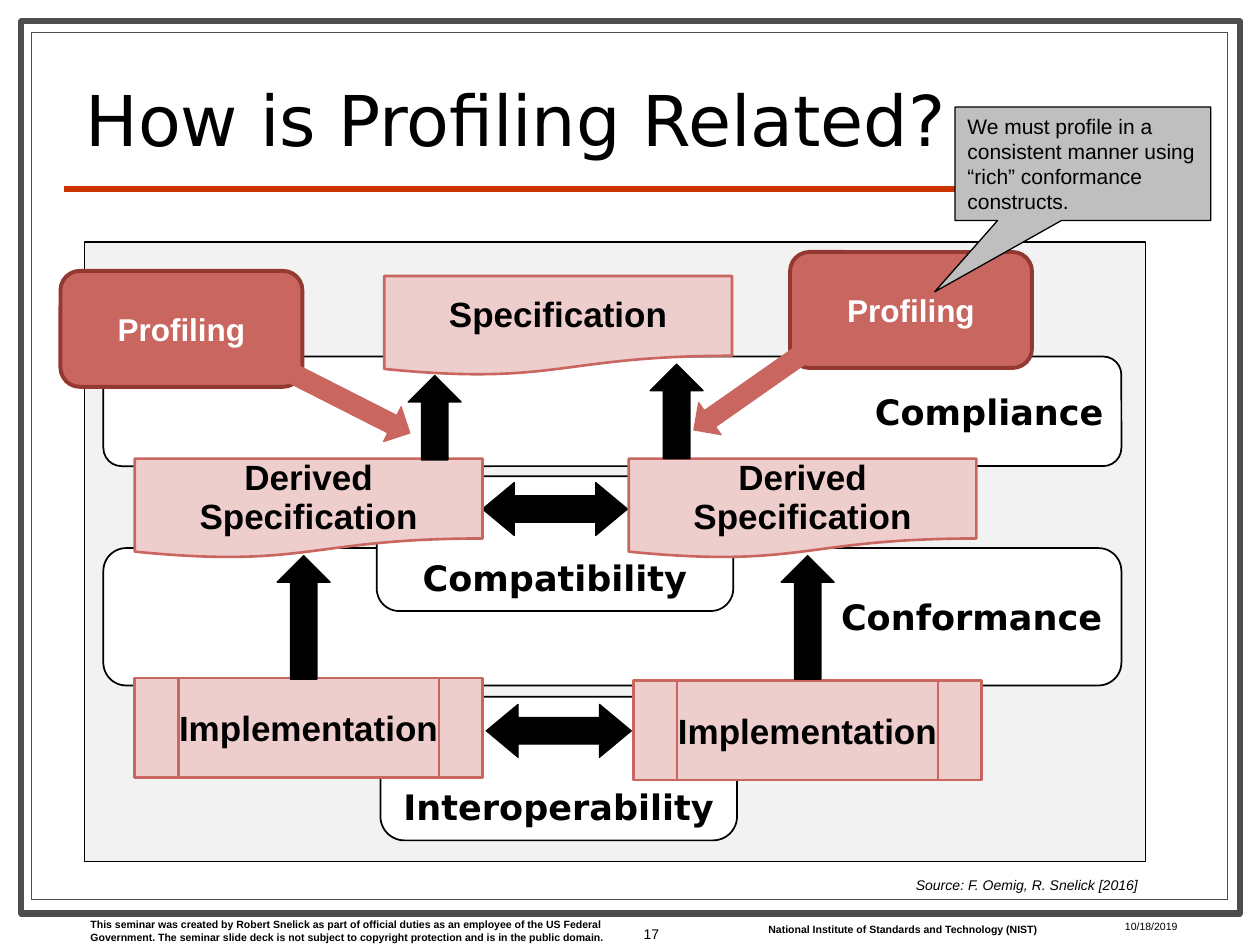
from dataclasses import dataclass
from typing import Optional

import pptx
import pptx.dml.color
import pptx.enum.shapes
import pptx.enum.text
import pptx.oxml
import pptx.util
from pptx.util import Inches

SHAPE = pptx.enum.shapes.MSO_SHAPE
ALIGN = pptx.enum.text.PP_ALIGN
ANCHOR = pptx.enum.text.MSO_ANCHOR


@dataclass(frozen=True)
class Theme:
    black: str = "000000"
    white: str = "FFFFFF"
    frame: str = "4D4D4D"
    rule: str = "CC3300"
    panel: str = "F2F2F2"
    callout: str = "BFBFBF"
    pink: str = "EECECC"
    red: str = "C96660"
    dark_red: str = "943832"
    sans: str = "Arial"
    display: str = "DejaVu Sans"
    title: int = 40
    label: int = 20
    badge: int = 18
    note: int = 12
    source: int = 8
    footer: int = 6


T = Theme()


@dataclass(frozen=True)
class Box:
    x: float
    y: float
    w: float
    h: float


@dataclass(frozen=True)
class Paint:
    fill: str
    line: str
    width: float


@dataclass(frozen=True)
class Type:
    size: int
    font: str = T.sans
    color: str = T.black
    bold: bool = False
    italic: bool = False
    align: ALIGN = ALIGN.LEFT
    anchor: ANCHOR = ANCHOR.TOP
    spacing: Optional[float] = None
    wrap: bool = True
    inset: float = 0.1


BAND = Paint(T.white, T.black, 1)
CARD = Paint(T.pink, T.red, 1.5)
BADGE = Paint(T.red, T.dark_red, 2.25)
BLACK_ARROW = Paint(T.black, T.black, 0.75)
RED_ARROW = Paint(T.red, T.red, 0.75)

BAND_TYPE = Type(T.label, T.display, bold=True, align=ALIGN.RIGHT, anchor=ANCHOR.MIDDLE)
TAB_TYPE = Type(T.label, T.display, bold=True, align=ALIGN.CENTER, anchor=ANCHOR.BOTTOM)
DOCUMENT_TYPE = Type(T.label, bold=True, align=ALIGN.CENTER, anchor=ANCHOR.MIDDLE,
                     spacing=0.93, inset=0.09)
PROCESS_TYPE = Type(T.label, bold=True, align=ALIGN.CENTER, anchor=ANCHOR.MIDDLE, wrap=False)
BADGE_TYPE = Type(T.badge, color=T.white, bold=True, align=ALIGN.CENTER, anchor=ANCHOR.MIDDLE)
FOOTER_TYPE = Type(T.footer, bold=True)


def rgb(color: str) -> pptx.dml.color.RGBColor:
    return pptx.dml.color.RGBColor.from_string(color)


def write(s, style: Type, *lines: str) -> None:
    """Fill a shape with one paragraph per line."""
    tf = s.text_frame
    tf.word_wrap = style.wrap
    tf.vertical_anchor = style.anchor
    tf.margin_left = tf.margin_right = Inches(style.inset)
    tf.margin_top = tf.margin_bottom = Inches(0.05)
    for i, line in enumerate(lines):
        p = tf.add_paragraph() if i else tf.paragraphs[0]
        p.alignment = style.align
        if style.spacing:
            p.line_spacing = style.spacing
        r = p.add_run()
        r.text = line
        r.font.name = style.font
        r.font.size = pptx.util.Pt(style.size)
        r.font.bold = style.bold
        r.font.italic = style.italic
        r.font.color.rgb = rgb(style.color)


def add_text(slide, box: Box, style: Type, text: str) -> None:
    sp = slide.shapes.add_textbox(Inches(box.x), Inches(box.y), Inches(box.w), Inches(box.h))
    write(sp, style, text)


def add_shape(slide, kind: SHAPE, box: Box, paint: Paint,
              rotation: float = 0, adjustments: tuple[float, ...] = ()):
    sp = slide.shapes.add_shape(kind, Inches(box.x), Inches(box.y), Inches(box.w), Inches(box.h))
    sp.shadow.inherit = False
    sp.fill.solid()
    sp.fill.fore_color.rgb = rgb(paint.fill)
    sp.line.color.rgb = rgb(paint.line)
    sp.line.width = pptx.util.Pt(paint.width)
    sp.rotation = rotation
    for i, value in enumerate(adjustments):
        sp.adjustments[i] = value
    return sp


def add_rule(slide) -> None:
    line = slide.shapes.add_connector(pptx.enum.shapes.MSO_CONNECTOR.STRAIGHT,
                                      Inches(0.51), Inches(1.5), Inches(9.58), Inches(1.5))
    line.line.color.rgb = rgb(T.rule)
    line.line.width = pptx.util.Pt(3)
    line._element.spPr.append(pptx.oxml.parse_xml(
        '<a:effectLst xmlns:a="http://schemas.openxmlformats.org/drawingml/2006/main"/>'))


def add_band(slide, box: Box, style: Type, text: str) -> None:
    write(add_shape(slide, SHAPE.ROUNDED_RECTANGLE, box, BAND), style, text)


def add_card(slide, kind: SHAPE, x: float, y: float, style: Type, *lines: str) -> None:
    write(add_shape(slide, kind, Box(x, y, 2.76, 0.79), CARD), style, *lines)


def add_two_way_arrow(slide, x: float, y: float) -> None:
    add_shape(slide, SHAPE.LEFT_RIGHT_ARROW, Box(x, y, 1.15, 0.42), BLACK_ARROW,
              adjustments=(0.5, 0.6))


def add_rising_arrow(slide, x: float, y: float, height: float) -> None:
    add_shape(slide, SHAPE.DOWN_ARROW, Box(x, y, 0.42, height), BLACK_ARROW, rotation=180)


def add_frame(slide) -> None:
    """Draw the double border, title rule and footer notices."""
    for box, width in ((Box(0.17, 0.17, 9.67, 7.08), 3.5), (Box(0.25, 0.26, 9.49, 6.88), 0.75)):
        add_shape(slide, SHAPE.RECTANGLE, box, Paint(T.white, T.frame, width))
    add_rule(slide)
    add_text(slide, Box(0.62, 7.24, 4.33, 0.3), FOOTER_TYPE,
             "This seminar was created by Robert Snelick as part of official duties as an "
             "employee of the US Federal Government. The seminar slide deck is not subject to "
             "copyright protection and is in the public domain.")
    add_text(slide, Box(6, 7.28, 2.38, 0.2), FOOTER_TYPE,
             "National Institute of Standards and Technology (NIST)")


def add_diagram(slide) -> None:
    add_shape(slide, SHAPE.RECTANGLE, Box(0.67, 1.92, 8.42, 4.92),
              Paint(T.panel, T.black, 0.75))
    add_band(slide, Box(0.82, 4.35, 8.08, 1.09), BAND_TYPE, "Conformance")
    add_band(slide, Box(0.82, 2.83, 8.08, 0.87), BAND_TYPE, "Compliance")
    add_band(slide, Box(2.99, 3.78, 2.83, 1.07), TAB_TYPE, "Compatibility")
    add_two_way_arrow(slide, 3.83, 3.83)
    for x in (1.07, 4.99):
        add_card(slide, SHAPE.FLOWCHART_DOCUMENT, x, 3.64, DOCUMENT_TYPE,
                 "Derived", "Specification")
    add_band(slide, Box(3.02, 5.53, 2.83, 1.14), TAB_TYPE, "Interoperability")
    for x, y in ((1.07, 5.38), (5.03, 5.4)):
        add_card(slide, SHAPE.FLOWCHART_PREDEFINED_PROCESS, x, y, PROCESS_TYPE, "Implementation")
    add_two_way_arrow(slide, 3.86, 5.59)
    add_card(slide, SHAPE.FLOWCHART_DOCUMENT, 3.05, 2.19, DOCUMENT_TYPE, "Specification")
    for x, y, height in ((2.2, 4.41, 0.98), (6.2, 4.41, 0.98),
                         (3.24, 2.98, 0.67), (5.16, 2.89, 0.75)):
        add_rising_arrow(slide, x, y, height)
    for x, y in ((6.27, 2), (0.48, 2.15)):
        badge = add_shape(slide, SHAPE.ROUNDED_RECTANGLE, Box(x, y, 1.92, 0.92), BADGE)
        write(badge, BADGE_TYPE, "Profiling")
    for x, y, angle in ((2.24, 3.04, 26.9), (5.41, 2.95, 145)):
        add_shape(slide, SHAPE.RIGHT_ARROW, Box(x, y, 1.07, 0.31), RED_ARROW, rotation=angle)


def main() -> None:
    prs = pptx.Presentation()
    prs.slide_width, prs.slide_height = Inches(10), Inches(7.5)
    slide = prs.slides.add_slide(prs.slide_layouts[6])
    add_frame(slide)
    add_diagram(slide)
    add_text(slide, Box(0.58, 0.42, 8.92, 0.9),
             Type(T.title, T.display, anchor=ANCHOR.BOTTOM, spacing=0.8),
             "How is Profiling Related?")
    add_text(slide, Box(7.17, 6.91, 2.03, 0.24), Type(T.source, italic=True, wrap=False),
             "Source: F. Oemig, R. Snelick [2016]")
    add_text(slide, Box(4.75, 7.15, 0.58, 0.52),
             Type(T.source, align=ALIGN.RIGHT, anchor=ANCHOR.MIDDLE), "17")
    add_text(slide, Box(8.83, 7.25, 0.92, 0.17), Type(T.footer), "10/18/2019")
    callout = add_shape(slide, SHAPE.RECTANGULAR_CALLOUT, Box(7.58, 0.85, 2.03, 0.9),
                        Paint(T.callout, T.black, 0.75), adjustments=(-0.58, 1.13))
    write(callout, Type(T.note),
          "We must profile in a consistent manner using “rich” conformance constructs.")
    prs.save("out.pptx")


if __name__ == "__main__":
    main()
